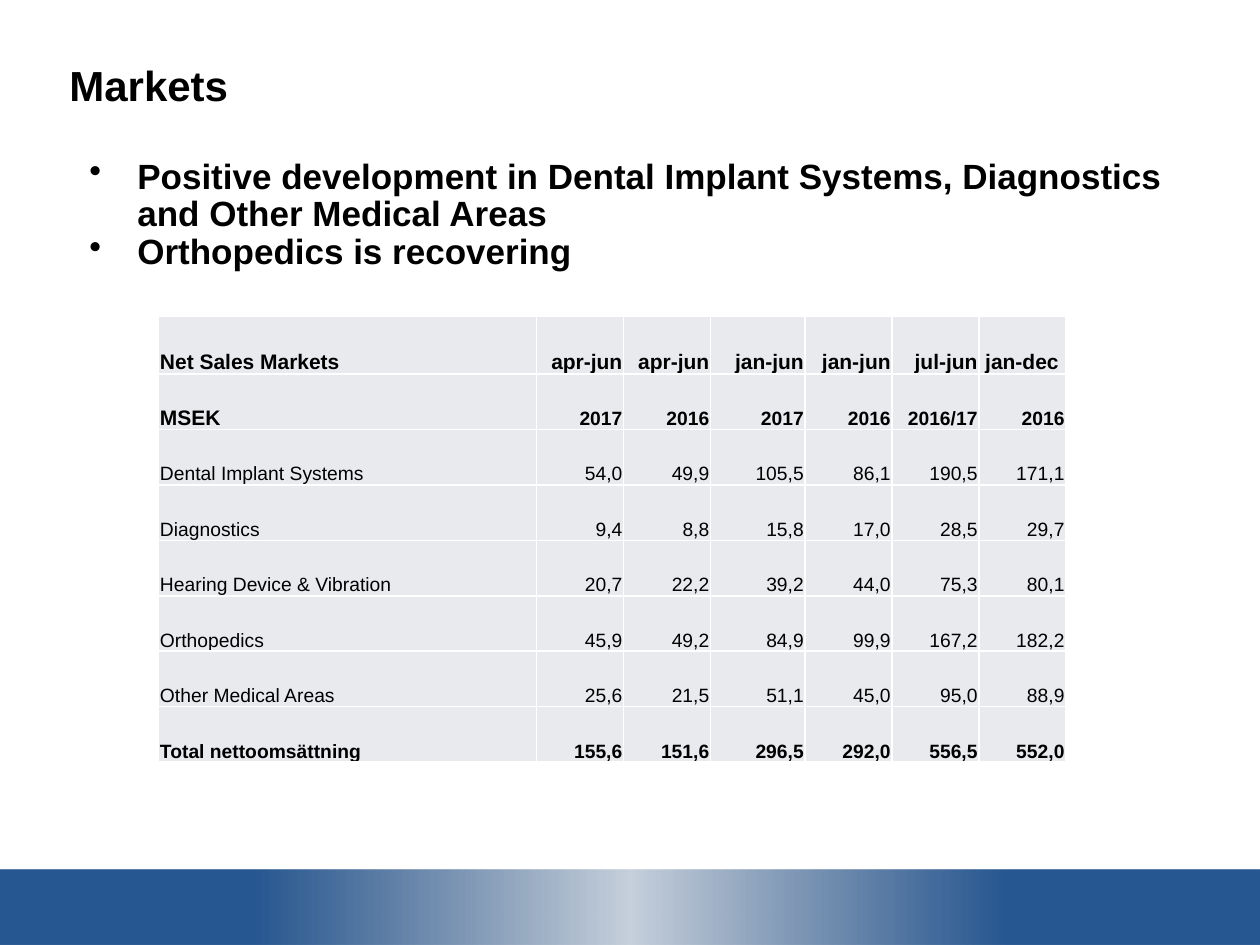
"""Build the Markets slide with its net sales table."""
from lxml import etree
from pptx import Presentation
from pptx.dml.color import RGBColor
from pptx.enum.shapes import MSO_SHAPE
from pptx.enum.text import MSO_ANCHOR, PP_ALIGN
from pptx.oxml import parse_xml
from pptx.oxml.ns import qn
from pptx.util import Inches, Pt

RECTANGLE = MSO_SHAPE.RECTANGLE
BOTTOM = MSO_ANCHOR.BOTTOM
LEFT, RIGHT = PP_ALIGN.LEFT, PP_ALIGN.RIGHT
NAMESPACE = "http://schemas.openxmlformats.org/drawingml/2006/main"

WIDTH, HEIGHT = 10, 7.5
FONT, BLACK, WHITE, CELL_FILL = "Arial", "000000", "FFFFFF", "E8EAEE"
BAND_STOPS = [(0, "275791", 100), (20, "275791", 100), (50, "1F4674", 25),
              (80, "275791", 100), (100, "275791", 100)]

TITLE = "Markets"
POINTS = [
    "Positive development in Dental Implant Systems, Diagnostics and Other Medical Areas",
    "Orthopedics is recovering",
]
SALES = [
    ("Net Sales Markets", "apr-jun", "apr-jun", "jan-jun", "jan-jun", "jul-jun", "jan-dec "),
    ("MSEK", "2017", "2016", "2017", "2016", "2016/17", "2016"),
    ("Dental Implant Systems", "54,0", "49,9", "105,5", "86,1", "190,5", "171,1"),
    ("Diagnostics", "9,4", "8,8", "15,8", "17,0", "28,5", "29,7"),
    ("Hearing Device & Vibration", "20,7", "22,2", "39,2", "44,0", "75,3", "80,1"),
    ("Orthopedics", "45,9", "49,2", "84,9", "99,9", "167,2", "182,2"),
    ("Other Medical Areas", "25,6", "21,5", "51,1", "45,0", "95,0", "88,9"),
    ("Total nettoomsättning", "155,6", "151,6", "296,5", "292,0", "556,5", "552,0"),
]
COLUMN_WIDTHS = [3, 0.69, 0.69, 0.75, 0.69, 0.69, 0.69]
ROW_HEIGHTS = [0.46] + [0.44] * (len(SALES) - 1)
BOLD_ROWS = {0, 1, len(SALES) - 1}


def rgb(value):
    return RGBColor.from_string(value)


def write(frame, lines, size, bold=True, align=LEFT, spacing=None, bullet=None):
    frame.word_wrap = True
    for index, line in enumerate(lines):
        paragraph = frame.paragraphs[0] if index == 0 else frame.add_paragraph()
        if bullet:
            properties = paragraph._p.get_or_add_pPr()
            properties.set("marL", str(Inches(0.38)))
            properties.set("indent", str(-Inches(0.38)))
            etree.SubElement(properties, qn("a:buChar")).set("char", bullet)
        paragraph.alignment = align
        if spacing:
            paragraph.line_spacing = spacing
        run = paragraph.add_run()
        run.text = line
        run.font.name, run.font.size, run.font.bold = FONT, Pt(size), bold
        run.font.color.rgb = rgb(BLACK)


def add_text(slide, box, lines, size, **text_format):
    frame = slide.shapes.add_textbox(*map(Inches, box)).text_frame
    frame.margin_left = frame.margin_top = frame.margin_right = frame.margin_bottom = 0
    write(frame, lines, size, spacing=0.9, **text_format)


def add_band(slide):
    height = HEIGHT * 0.08
    band = slide.shapes.add_shape(
        RECTANGLE, 0, Inches(HEIGHT - height), Inches(WIDTH), Inches(height))
    band.shadow.inherit = False
    band.line.fill.background()
    stops = "".join(
        f'<a:gs pos="{position * 1000}"><a:srgbClr val="{color}">'
        f'<a:alpha val="{opacity * 1000}"/></a:srgbClr></a:gs>'
        for position, color, opacity in BAND_STOPS)
    gradient = parse_xml(
        f'<a:gradFill xmlns:a="{NAMESPACE}" rotWithShape="1"><a:gsLst>{stops}</a:gsLst>'
        '<a:lin ang="0" scaled="0"/></a:gradFill>')
    band._element.spPr.find(qn("a:prstGeom")).addnext(gradient)


def add_borders(cell):
    properties = cell._tc.get_or_add_tcPr()
    for side in ("lnL", "lnR", "lnT", "lnB"):
        properties.append(parse_xml(
            f'<a:{side} xmlns:a="{NAMESPACE}" w="{Pt(1)}"><a:solidFill>'
            f'<a:srgbClr val="{WHITE}"/></a:solidFill></a:{side}>'))


def add_sales_table(slide, left, top):
    box = (left, top, sum(COLUMN_WIDTHS), sum(ROW_HEIGHTS))
    table = slide.shapes.add_table(
        len(SALES), len(COLUMN_WIDTHS), *map(Inches, box)).table
    table.first_row = table.horz_banding = False
    for column, width in zip(table.columns, COLUMN_WIDTHS):
        column.width = Inches(width)
    for row_index, values in enumerate(SALES):
        table.rows[row_index].height = Inches(ROW_HEIGHTS[row_index])
        for column_index, value in enumerate(values):
            cell = table.cell(row_index, column_index)
            cell.margin_left = cell.margin_right = cell.margin_top = Inches(0.01)
            cell.margin_bottom = 0
            cell.vertical_anchor = BOTTOM
            add_borders(cell)
            cell.fill.solid()
            cell.fill.fore_color.rgb = rgb(CELL_FILL)
            is_large = row_index == 0 or (row_index, column_index) == (1, 0)
            write(cell.text_frame, [value], 12 if is_large else 11,
                  bold=row_index in BOLD_ROWS, align=RIGHT if column_index else LEFT)


def main():
    presentation = Presentation()
    presentation.slide_width, presentation.slide_height = Inches(WIDTH), Inches(HEIGHT)
    slide = presentation.slides.add_slide(presentation.slide_layouts[6])
    add_band(slide)
    add_text(slide, (0.55, 0.52, 8.89, 0.63), [TITLE], 24)
    add_text(slide, (0.71, 1.26, 8.89, 0.79), POINTS, 20, bullet="•")
    add_sales_table(slide, 1.26, 2.51)
    presentation.save("out.pptx")


if __name__ == "__main__":
    main()
